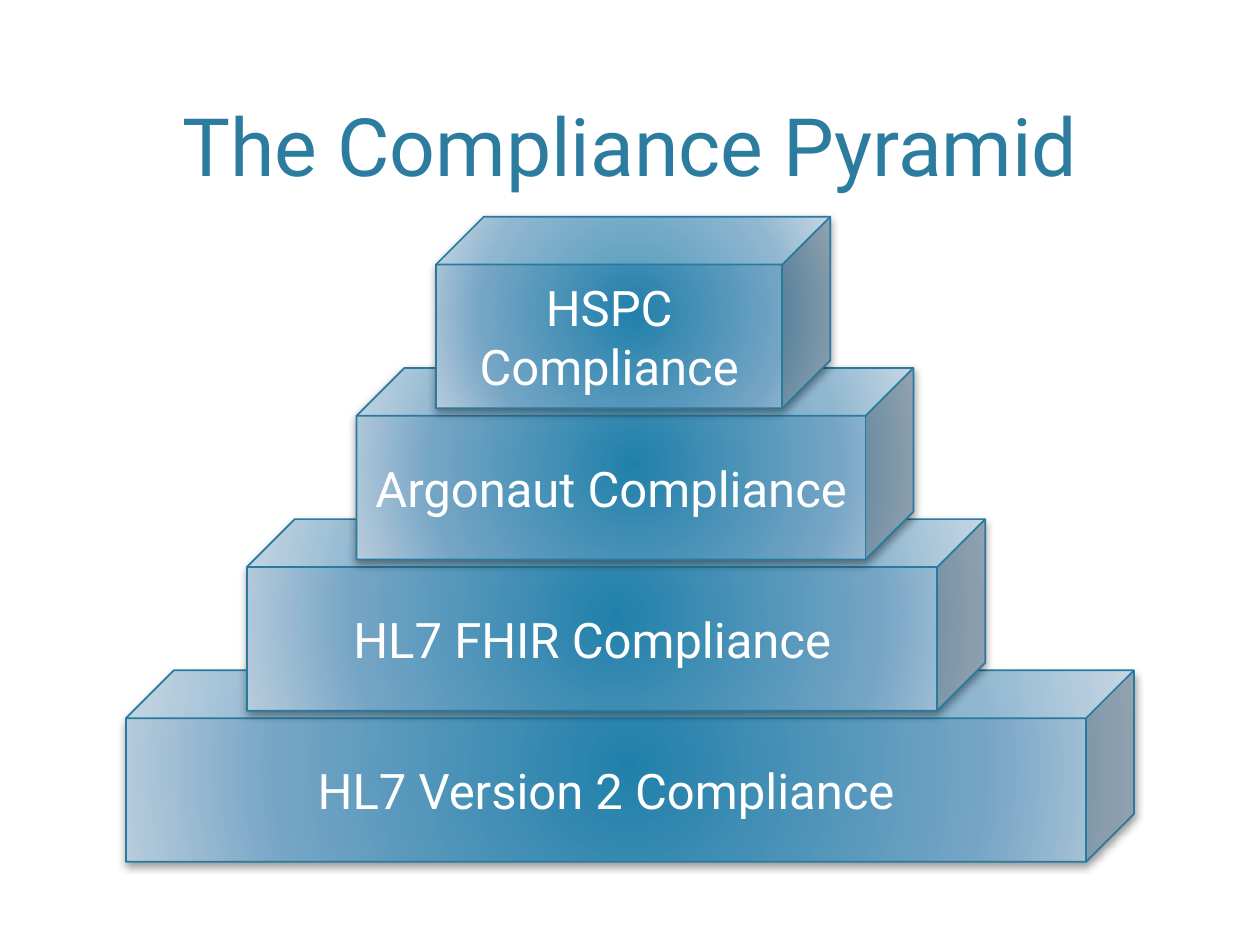
from dataclasses import dataclass

from lxml import etree
from pptx import Presentation
from pptx.dml.color import RGBColor
from pptx.enum.shapes import MSO_SHAPE as Shape
from pptx.enum.text import MSO_ANCHOR as Anchor, MSO_AUTO_SIZE as AutoSize, PP_ALIGN as Align
from pptx.oxml import parse_xml
from pptx.oxml.ns import nsdecls, qn
from pptx.slide import Slide
from pptx.text.text import TextFrame
from pptx.util import Inches, Pt

FONT = "Roboto"
TITLE_BLUE = RGBColor(0x2C, 0x7C, 0x9F)
EDGE_BLUE = RGBColor(0x28, 0x7A, 0x9E)
WHITE = RGBColor(0xFF, 0xFF, 0xFF)
BLACK = RGBColor(0x00, 0x00, 0x00)
GRADIENT = (
    (0, RGBColor(0x21, 0x80, 0xAA)),
    (69, RGBColor(0x75, 0xA5, 0xC5)),
    (100, RGBColor(0xB8, 0xCC, 0xDC)),
)

BASE_TOP = 5.32
TIER_STEP = 1.2
TIER_HEIGHT = 1.52


@dataclass(frozen=True)
class Tier:
    label: str
    left: float
    width: float


TIERS = (
    Tier("HL7 Version 2 Compliance", 1, 8),
    Tier("HL7 FHIR Compliance", 1.96, 5.86),
    Tier("Argonaut Compliance", 2.83, 4.42),
    Tier("HSPC Compliance", 3.46, 3.13),
)


def set_text(tf: TextFrame, text: str, size: int, color: RGBColor, anchor: Anchor) -> None:
    tf.text = text
    tf.word_wrap = True
    tf.auto_size = AutoSize.NONE
    tf.vertical_anchor = anchor
    p = tf.paragraphs[0]
    p.alignment = Align.CENTER
    p.font.name = FONT
    p.font.size = Pt(size)
    p.font.color.rgb = color


def set_radial_fill(sp: Shape) -> None:
    sp.fill.gradient()
    stops = "".join(
        f'<a:gs pos="{pos * 1000}"><a:srgbClr val="{color}"/></a:gs>' for pos, color in GRADIENT
    )
    fill = parse_xml(
        f'<a:gradFill {nsdecls("a")} rotWithShape="1"><a:gsLst>{stops}</a:gsLst>'
        '<a:path path="circle"><a:fillToRect l="100000" t="100000" r="100000" b="100000"/></a:path>'
        "</a:gradFill>"
    )
    props = sp.element.spPr
    props.replace(props.find(qn("a:gradFill")), fill)


def set_shadow(sp: Shape) -> None:
    sp.shadow.inherit = False
    effects = sp.element.spPr.find(qn("a:effectLst"))
    shadow = etree.SubElement(
        effects, qn("a:outerShdw"),
        blurRad=str(Pt(5)), dist=str(Pt(2)), dir="5400000", rotWithShape="0",
    )
    color = etree.SubElement(shadow, qn("a:srgbClr"), val=str(BLACK))
    etree.SubElement(color, qn("a:alpha"), val="40000")


def add_tier(s: Slide, tier: Tier, top: float) -> None:
    sp = s.shapes.add_shape(
        Shape.CUBE, Inches(tier.left), Inches(top), Inches(tier.width), Inches(TIER_HEIGHT)
    )
    set_radial_fill(sp)
    sp.line.color.rgb = EDGE_BLUE
    sp.line.width = Pt(1)
    set_shadow(sp)
    set_text(sp.text_frame, tier.label, 28, WHITE, Anchor.MIDDLE)


def add_title(s: Slide, text: str) -> None:
    title = s.shapes.title
    title.left, title.top = Inches(0.6), Inches(0.12)
    title.width, title.height = Inches(8.8), Inches(1.46)
    set_text(title.text_frame, text, 46, TITLE_BLUE, Anchor.BOTTOM)


def main() -> None:
    prs = Presentation()
    prs.slide_width, prs.slide_height = Inches(10), Inches(7.5)
    s = prs.slides.add_slide(prs.slide_layouts[5])
    add_title(s, "The Compliance Pyramid")
    for level, tier in enumerate(TIERS):
        add_tier(s, tier, BASE_TOP - level * TIER_STEP)
    prs.save("out.pptx")


if __name__ == "__main__":
    main()
